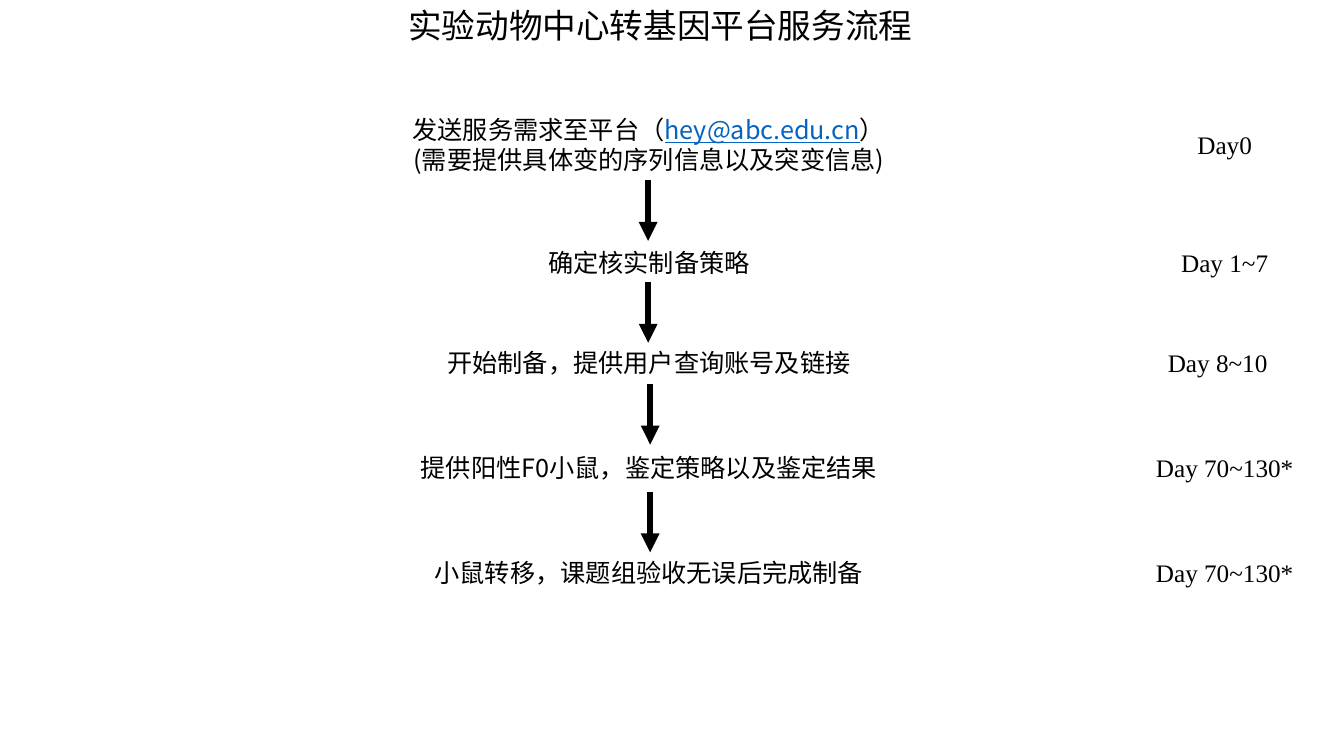
from lxml import etree
from pptx import Presentation
from pptx.dml.color import RGBColor
from pptx.enum.shapes import MSO_CONNECTOR
from pptx.enum.text import MSO_ANCHOR, MSO_AUTO_SIZE, PP_ALIGN
from pptx.oxml.ns import qn
from pptx.util import Inches, Pt

STRAIGHT = MSO_CONNECTOR.STRAIGHT
CENTER = PP_ALIGN.CENTER
TOP = MSO_ANCHOR.TOP
FIT_SHAPE = MSO_AUTO_SIZE.SHAPE_TO_FIT_TEXT

COLORS = {"ink": "000000", "email": "0563C1", "background": "FFFFFF"}
SANS, SERIF = "Noto Sans CJK SC", "Times New Roman"
GRID_COLUMNS, GRID_ROWS = 40, 30

EMAIL = "hey@abc.edu.cn"
TITLE = "实验动物中心转基因平台服务流程"
LINE_ROWS = 1.6
ARROW_ROWS = 2.4
STEP_COLUMN, STEP_COLUMNS = 8, 22.62
DAY_COLUMNS = 7.14

STEPS = [
    (4.32, 2.84, [["发送服务需求至平台（", EMAIL, "）"],
                  ["(需要提供具体变的序列信息以及突变信息)"]], "Day0", 32.88),
    (9.6, LINE_ROWS, [["确定核实制备策略"]], "Day 1~7", 32.88),
    (13.6, LINE_ROWS, [["开始制备，提供用户查询账号及链接"]], "Day 8~10", 32.67),
    (17.76, LINE_ROWS, [["提供阳性F0小鼠，鉴定策略以及鉴定结果"]], "Day 70~130*", 32.88),
    (21.92, LINE_ROWS, [["小鼠转移，课题组验收无误后完成制备"]], "Day 70~130*", 32.88),
]
ARROWS = [(19.29, 7.16), (19.29, 11.2), (19.35, 15.24), (19.35, 19.52)]


class FlowSlide:
    """Draw the styled elements of a process flow on one gridded slide."""

    def __init__(self, presentation):
        self.column = presentation.slide_width / GRID_COLUMNS
        self.row = presentation.slide_height / GRID_ROWS
        self.slide = presentation.slides.add_slide(presentation.slide_layouts[6])
        fill = self.slide.background.fill
        fill.solid()
        fill.fore_color.rgb = RGBColor.from_string(COLORS["background"])

    def place(self, column, row):
        return round(column * self.column), round(row * self.row)

    def text(self, column, row, columns, rows, lines, font_name, size=18):
        box = self.slide.shapes.add_textbox(*self.place(column, row), *self.place(columns, rows))
        frame = box.text_frame
        frame.word_wrap = True
        frame.auto_size = FIT_SHAPE
        frame.vertical_anchor = TOP
        for index, pieces in enumerate(lines):
            paragraph = frame.add_paragraph() if index else frame.paragraphs[0]
            paragraph.alignment = CENTER
            paragraph.font.name = font_name
            paragraph.font.size = Pt(size)
            paragraph.font.color.rgb = RGBColor.from_string(COLORS["ink"])
            for piece in pieces:
                run = paragraph.add_run()
                run.text = piece
                if piece == EMAIL:
                    run.font.underline = True
                    run.font.color.rgb = RGBColor.from_string(COLORS["email"])

    def arrow(self, column, row):
        connector = self.slide.shapes.add_connector(
            STRAIGHT, *self.place(column, row), *self.place(column, row + ARROW_ROWS))
        connector.line.width = Pt(4.5)
        connector.line.color.rgb = RGBColor.from_string(COLORS["ink"])
        properties = connector.element.spPr
        etree.SubElement(properties.find(qn("a:ln")), qn("a:tailEnd"), type="triangle")
        etree.SubElement(properties, qn("a:effectLst"))

    def step(self, row, rows, lines, day, day_column):
        self.text(STEP_COLUMN, row, STEP_COLUMNS, rows, lines, SANS)
        day_row = row + (rows - LINE_ROWS) / 2
        self.text(day_column, day_row, DAY_COLUMNS, LINE_ROWS, [[day]], SERIF)


def main():
    presentation = Presentation()
    presentation.slide_width = Inches(13.33)
    presentation.slide_height = Inches(7.5)
    flow = FlowSlide(presentation)
    flow.text(11.5, 0, 16.3, 2, [[TITLE]], SERIF, 24)
    for step in STEPS:
        flow.step(*step)
    for arrow in ARROWS:
        flow.arrow(*arrow)
    presentation.save("out.pptx")


if __name__ == "__main__":
    main()
